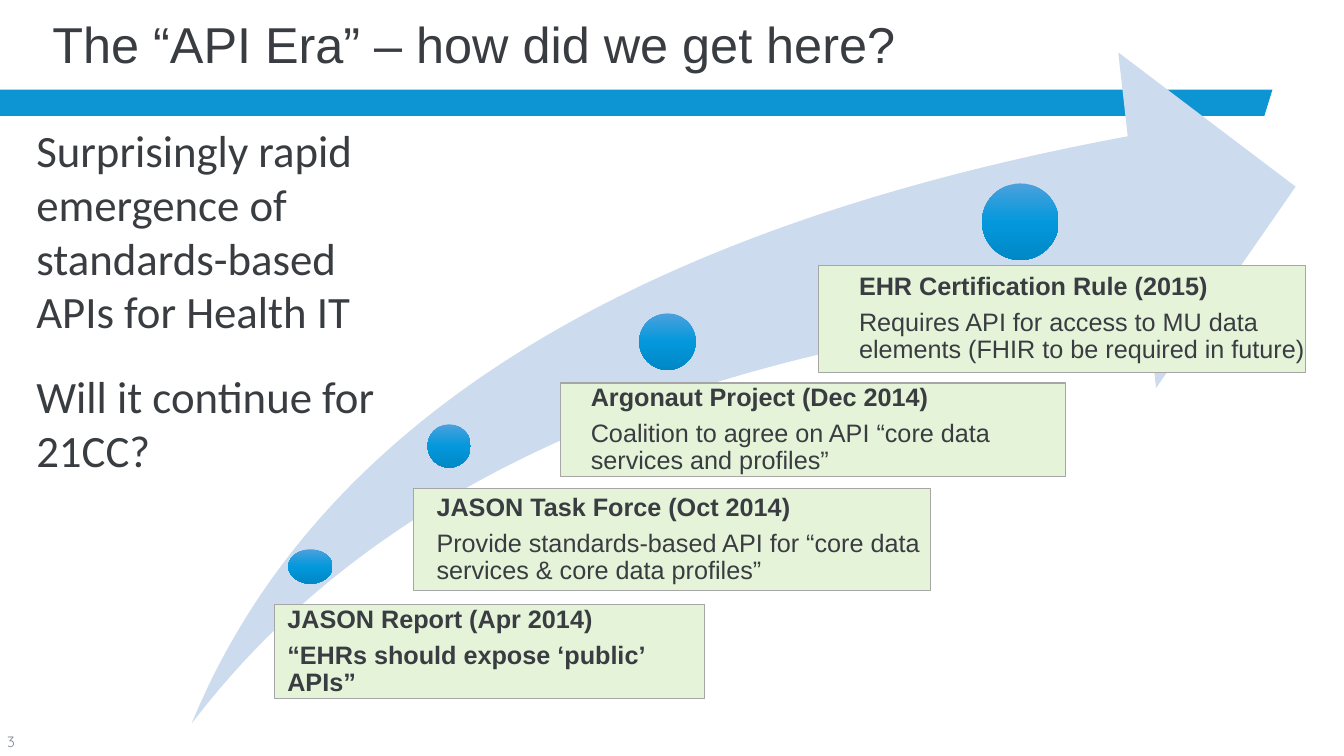
from copy import deepcopy

from pptx import Presentation
from pptx import util as u
from pptx.dml.color import RGBColor
from pptx.enum import shapes, text

PX = 9144  # 100 px to the inch

COLORS = {
    "ink": "393D41",
    "number": "838A92",
    "banner": "0D94D2",
    "swoosh": "CCDCEE",
    "card": "E5F3D9",
    "card_edge": "A6A6A6",
    "dot_top": "4BA1DC",
    "dot_middle": "0398DC",
    "dot_bottom": "0088C6",
}

# Dot box, card box, left inset of the card, heading, detail, detail in bold
MILESTONES = [
    ((286, 545, 44, 34), (272, 600, 427, 93), 13,
     "JASON Report (Apr 2014)",
     "“EHRs should expose ‘public’ APIs”", True),
    ((424, 421, 43, 43), (410, 485, 513, 101), 23,
     "JASON Task Force (Oct 2014)",
     "Provide standards-based API for “core data services & core data profiles”", False),
    ((634, 311, 56, 56), (556, 380, 501, 93), 30,
     "Argonaut Project (Dec 2014)",
     "Coalition to agree on API “core data services and profiles”", False),
    ((974, 182, 76, 76), (812, 263, 483, 107), 40,
     "EHR Certification Rule (2015)",
     "Requires API for access to MU data elements (FHIR to be required in future)", False),
]


def rgb(name):
    return RGBColor.from_string(COLORS[name])


def emu(lengths):
    return [length * PX for length in lengths]


class SlideBuilder:
    def __init__(self, slide):
        self.shapes = slide.shapes

    def paint(self, shape, fill, edge=None):
        shape.shadow.inherit = False
        shape.fill.solid()
        shape.fill.fore_color.rgb = rgb(fill)
        if edge:
            shape.line.color.rgb = rgb(edge)
            shape.line.width = u.Pt(0.75)
        else:
            shape.line.fill.background()

    def outline(self, points, fill):
        builder = self.shapes.build_freeform(*points[0], scale=PX)
        builder.add_line_segments(points[1:], close=True)
        self.paint(builder.convert_to_shape(), fill)

    def preset(self, kind, box, fill, edge=None):
        shape = self.shapes.add_shape(kind, *emu(box))
        self.paint(shape, fill, edge)
        return shape

    def dot(self, box):
        dot = self.preset(shapes.MSO_SHAPE.OVAL, box, "dot_middle")
        dot.fill.gradient()
        dot.fill.gradient_angle = 270
        stop_list = dot.fill._fill._gradFill.gsLst
        stop_list.insert(1, deepcopy(stop_list[0]))
        names = ("dot_top", "dot_middle", "dot_bottom")
        for stop, name, position in zip(dot.fill.gradient_stops, names, (0, 0.5, 1)):
            stop.color.rgb = rgb(name)
            stop.position = position

    def set_text(self, shape, lines, size, font="Arial", color="ink", insets=(0, 0, 0, 0),
                 anchor=text.MSO_ANCHOR.MIDDLE, spacing=None, gap=0):
        """Fill a shape with (wording, bold) lines, gap points apart."""
        frame = shape.text_frame
        frame.word_wrap = True
        frame.vertical_anchor = anchor
        (frame.margin_left, frame.margin_top,
         frame.margin_right, frame.margin_bottom) = emu(insets)
        for index, (wording, bold) in enumerate(lines):
            paragraph = frame.add_paragraph() if index else frame.paragraphs[0]
            paragraph.text = wording
            paragraph.alignment = text.PP_ALIGN.LEFT
            if spacing:
                paragraph.line_spacing = spacing
            if index:
                paragraph.space_before = u.Pt(gap)
            paragraph.font.name = font
            paragraph.font.size = u.Pt(size)
            paragraph.font.bold = bold
            paragraph.font.color.rgb = rgb(color)

    def text_box(self, box, lines, size, **style):
        self.set_text(self.shapes.add_textbox(*emu(box)), lines, size, **style)

    def card(self, box, inset, heading, detail, detail_bold):
        card = self.preset(shapes.MSO_SHAPE.RECTANGLE, box, "card", "card_edge")
        self.set_text(card, [(heading, True), (detail, detail_bold)], 18,
                      insets=(inset, 0, 0, 0), spacing=0.9, gap=6.3)


def main():
    deck = Presentation()
    deck.slide_width, deck.slide_height = u.Inches(13.33), u.Inches(7.5)
    page = SlideBuilder(deck.slides.add_slide(deck.slide_layouts[6]))

    page.outline([(0, 115), (1254, 115), (1262, 89), (0, 89)], "banner")
    page.text_box((0, 722, 43, 28), [("3", False)], 10.7, font="Quicksand",
                  color="number", insets=(7, 5, 7, 5), anchor=text.MSO_ANCHOR.TOP)
    page.text_box((45, 0, 1150, 94), [("The “API Era” – how did we get here?", False)], 36,
                  insets=(7, 4, 7, 4), spacing=0.9)
    page.text_box((10, 117, 412, 364), [
        ("Surprisingly rapid emergence of standards-based APIs for Health IT", False),
        ("Will it continue for 21CC?", False),
    ], 32, font="Calibri", insets=(26, 5, 13, 5), anchor=text.MSO_ANCHOR.TOP, gap=22)

    swoosh = page.preset(shapes.MSO_SHAPE.SWOOSH_ARROW, (190, 52, 1095, 666), "swoosh")
    swoosh.adjustments[0] = swoosh.adjustments[1] = 0.25
    for dot_box, card_box, inset, heading, detail, detail_bold in MILESTONES:
        page.dot(dot_box)
        page.card(card_box, inset, heading, detail, detail_bold)

    deck.save("out.pptx")


if __name__ == "__main__":
    main()
